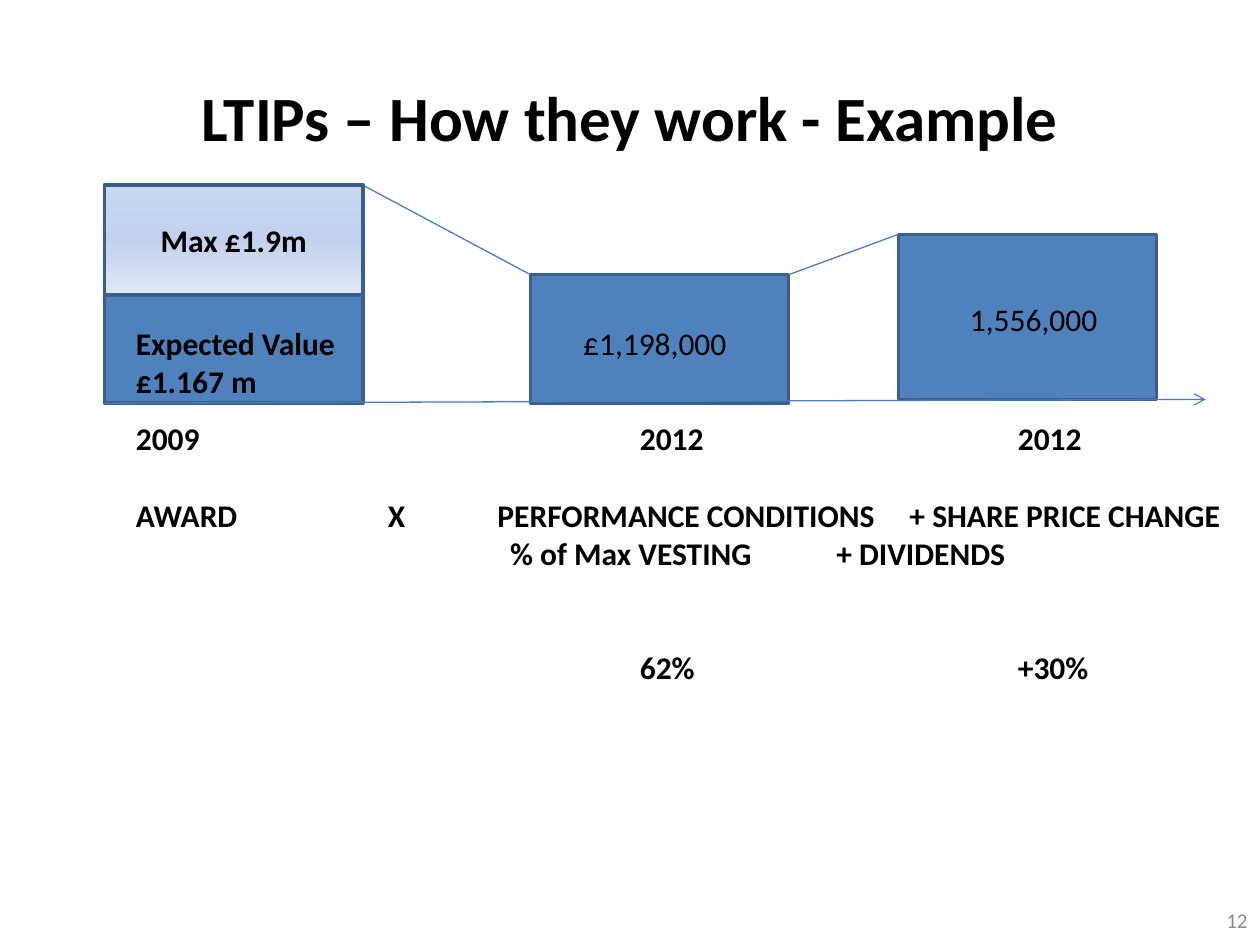
from lxml import etree
from pptx import Presentation
from pptx.dml.color import RGBColor
from pptx.enum.shapes import MSO_CONNECTOR, MSO_SHAPE
from pptx.enum.text import MSO_ANCHOR, PP_ALIGN
from pptx.oxml.ns import qn
from pptx.util import Inches, Pt

RECT, STRAIGHT = MSO_SHAPE.RECTANGLE, MSO_CONNECTOR.STRAIGHT
LEFT, CENTER, RIGHT = PP_ALIGN.LEFT, PP_ALIGN.CENTER, PP_ALIGN.RIGHT
TOP, MIDDLE = MSO_ANCHOR.TOP, MSO_ANCHOR.MIDDLE

FONT = "Calibri"
COLORS = {"text": "000000", "number": "8C8C8C", "bar": "4F81BD",
          "border": "3A5F8C", "line": "4B7EBC"}
MAX_GRADIENT = [(0, "C6D9F1"), (50, "C2D1ED"), (100, "E1E8F5")]

# Bars: left, top, height
BAR_WIDTH = 2.05
BARS = [(0.83, 1.47, 1.73), (4.21, 2.18, 1.02), (7.13, 1.86, 1.31)]
MAX_HEIGHT = 0.87
AXIS = ((0.83, 3.2), (9.57, 3.17))

# Plain labels: text, box, size, bold, alignment, anchor, colour
TITLE = ("LTIPs – How they work - Example", (0.5, 0.3, 9, 1.25), 36, True, CENTER, MIDDLE, "text")
LABELS = [
    ("Expected Value £1.167 m", (0.98, 2.52, 1.81, 0.71), 18, True, LEFT, TOP, "text"),
    ("£1,198,000", (4.53, 2.52, 1.5, 0.4), 18, False, LEFT, TOP, "text"),
    ("1,556,000", (7.6, 2.33, 1.26, 0.4), 18, False, LEFT, TOP, "text"),
    ("12", (9.33, 7.1, 0.67, 0.4), 12, False, RIGHT, MIDDLE, "number"),
]

# Formula rows: text, tab stops in inches, blank lines above
FORMULA_BOX = (0.98, 3.28, 8.9, 2.52)
LINE_PT = 22
FORMULA = [
    ("2009\t2012\t2012", (4, 7), 0),
    ("AWARD\tX\tPERFORMANCE CONDITIONS\t+ SHARE PRICE CHANGE", (2, 2.87, 6.14), 1),
    ("\t% of Max VESTING\t+ DIVIDENDS", (2.97, 5.56), 0),
    ("\t62%\t+30%", (4, 7), 2),
]


def rgb(name):
    return RGBColor.from_string(COLORS[name])


def add_run(p, text, size, bold, color="text"):
    r = p.add_run()
    r.text = text
    r.font.name, r.font.size, r.font.bold = FONT, Pt(size), bold
    r.font.color.rgb = rgb(color)


def add_box(slide, box):
    tf = slide.shapes.add_textbox(*map(Inches, box)).text_frame
    tf.word_wrap = True
    return tf


def add_label(slide, text, box, size, bold, align, anchor, color):
    tf = add_box(slide, box)
    tf.vertical_anchor = anchor
    tf.paragraphs[0].alignment = align
    add_run(tf.paragraphs[0], text, size, bold, color)


def add_bar(slide, left, top, height):
    sp = slide.shapes.add_shape(RECT, *map(Inches, (left, top, BAR_WIDTH, height)))
    sp.shadow.inherit = False
    sp.fill.solid()
    sp.fill.fore_color.rgb = rgb("bar")
    sp.line.color.rgb = rgb("border")
    sp.line.width = Pt(2)
    return sp


def add_line(slide, start, end, arrow=False):
    line = slide.shapes.add_connector(STRAIGHT, *map(Inches, start + end))
    line.line.color.rgb = rgb("line")
    line.line.width = Pt(0.75)
    if arrow:
        etree.SubElement(line.line._get_or_add_ln(), qn("a:tailEnd"), type="arrow")
    etree.SubElement(line._element.spPr, qn("a:effectLst"))


def set_gradient(sp, stops):
    sp.fill.gradient()
    sp.fill.gradient_angle = 270
    stop_list = sp._element.spPr.find(".//" + qn("a:gsLst"))
    for old in list(stop_list):
        stop_list.remove(old)
    for percent, color in stops:
        stop = etree.SubElement(stop_list, qn("a:gs"), pos=str(percent * 1000))
        etree.SubElement(stop, qn("a:srgbClr"), val=color)


def add_formula(slide):
    tf = add_box(slide, FORMULA_BOX)
    for i, (text, tabs, blanks) in enumerate(FORMULA):
        p = tf.add_paragraph() if i else tf.paragraphs[0]
        if blanks:
            p.space_before = Pt(blanks * LINE_PT)
        tab_list = etree.SubElement(p._p.get_or_add_pPr(), qn("a:tabLst"))
        for tab in tabs:
            etree.SubElement(tab_list, qn("a:tab"), pos=str(Inches(tab)), algn="l")
        add_run(p, text, 18, True)


def main():
    prs = Presentation()
    prs.slide_width, prs.slide_height = Inches(10), Inches(7.5)
    slide = prs.slides.add_slide(prs.slide_layouts[6])

    # Title and formula
    add_label(slide, *TITLE)
    add_formula(slide)

    # Bars, time axis and lines joining the bar tops
    for bar in BARS:
        add_bar(slide, *bar)
    add_line(slide, *AXIS, arrow=True)
    for (left, top, _), (next_left, next_top, _) in zip(BARS, BARS[1:]):
        add_line(slide, (left + BAR_WIDTH, top), (next_left, next_top))

    # Maximum award on top of the first bar
    max_bar = add_bar(slide, *BARS[0][:2], MAX_HEIGHT)
    set_gradient(max_bar, MAX_GRADIENT)
    tf = max_bar.text_frame
    tf.vertical_anchor = MIDDLE
    tf.paragraphs[0].alignment = CENTER
    add_run(tf.paragraphs[0], "Max £1.9m", 18, True)

    # Bar values and slide number
    for label in LABELS:
        add_label(slide, *label)

    prs.save("out.pptx")


if __name__ == "__main__":
    main()
